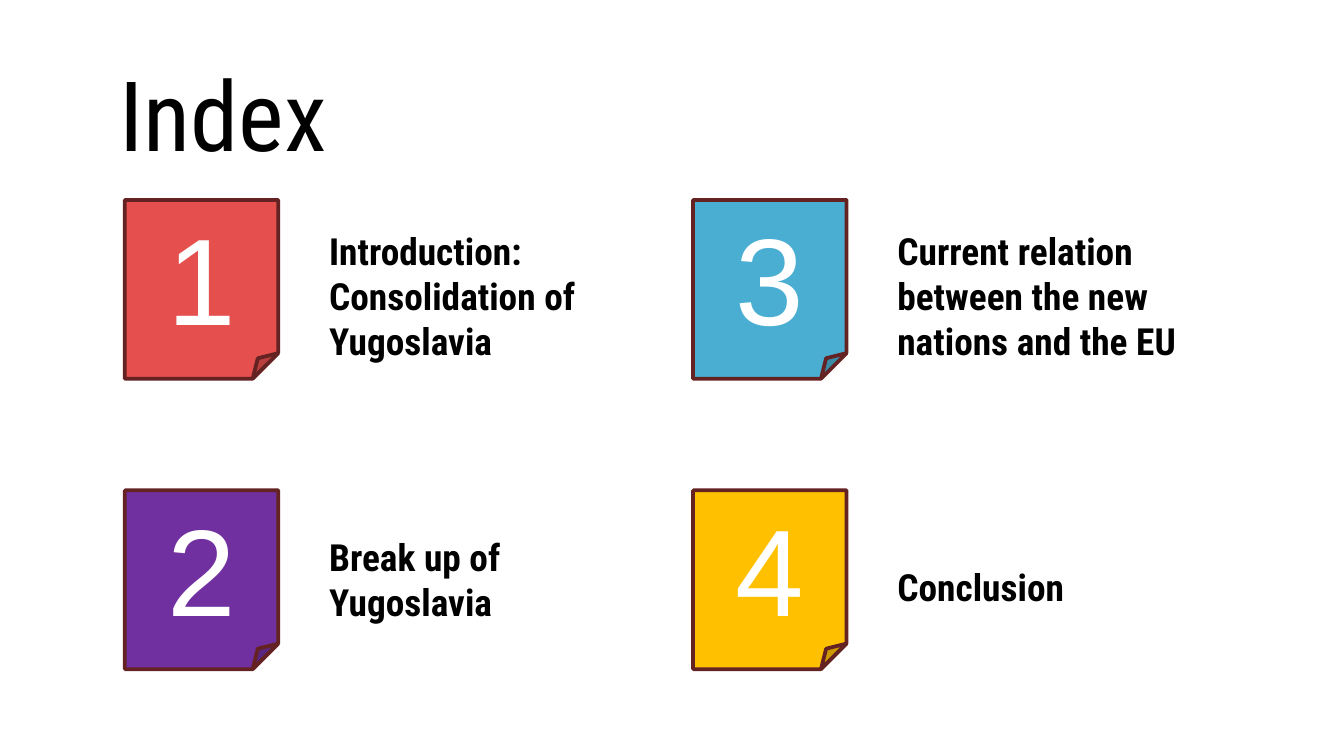
"""Build the Index slide: a title and four numbered notes with their topics."""
from dataclasses import dataclass

from pptx import Presentation
from pptx import util as u
from pptx.dml.color import RGBColor
from pptx.enum import shapes, text
from pptx.slide import Slide
from pptx.text.text import TextFrame

COLORS = {
    "red": "E54F4E",
    "purple": "7030A0",
    "blue": "49AED1",
    "amber": "FFC000",
    "border": "642322",
    "ink": "000000",
    "white": "FFFFFF",
}
HEADING_FONT = "Roboto Condensed"
NUMBER_FONT = "Arial"
LEFT, TOP = 2.36, 3.78
COLUMN_STEP, ROW_STEP = 10.74, 5.49
NOTE_WIDTH, NOTE_HEIGHT = 2.9, 3.38
LABEL_OFFSET, LABEL_WIDTH = 3.61, 5.84


@dataclass
class Topic:
    """One numbered entry of the index, with its label's top and height in cm."""

    label: str
    color: str
    label_top: float
    label_height: float


TOPICS = [
    Topic("Introduction: Consolidation of Yugoslavia", "red", 4.19, 2.82),
    Topic("Break up of Yugoslavia", "purple", 9.98, 1.96),
    Topic("Current relation between the new nations and the EU", "blue", 4.19, 2.82),
    Topic("Conclusion", "amber", 10.54, 1.12),
]


def rgb(name: str) -> RGBColor:
    """Return the named colour."""
    return RGBColor.from_string(COLORS[name])


def write(tf: TextFrame, content: str, font: str, size: float, color: str,
          bold: bool = False) -> None:
    """Set the text of a frame and format its run."""
    tf.word_wrap = True
    p = tf.paragraphs[0]
    p.text = content
    r = p.runs[0]
    r.font.name = font
    r.font.size = u.Pt(size)
    r.font.bold = bold
    r.font.color.rgb = rgb(color)


def add_title(s: Slide, content: str) -> None:
    """Add the slide title."""
    sp = s.shapes.add_textbox(u.Cm(2.01), u.Cm(0), u.Cm(12.55), u.Cm(4.27))
    tf = sp.text_frame
    tf.vertical_anchor = text.MSO_ANCHOR.MIDDLE
    tf.margin_left = tf.margin_right = u.Cm(0.25)
    tf.margin_top = tf.margin_bottom = u.Cm(0.25)
    write(tf, content, HEADING_FONT, 52, "ink")


def add_note(s: Slide, number: int, color: str, left: float, top: float) -> None:
    """Add a numbered note with a folded corner."""
    sp = s.shapes.add_shape(shapes.MSO_SHAPE.FOLDED_CORNER, u.Cm(left), u.Cm(top),
                            u.Cm(NOTE_WIDTH), u.Cm(NOTE_HEIGHT))
    sp.shadow.inherit = False
    sp.fill.solid()
    sp.fill.fore_color.rgb = rgb(color)
    sp.line.color.rgb = rgb("border")
    sp.line.width = u.Pt(2)
    tf = sp.text_frame
    tf.vertical_anchor = text.MSO_ANCHOR.MIDDLE
    write(tf, str(number), NUMBER_FONT, 66, "white")
    tf.paragraphs[0].alignment = text.PP_ALIGN.CENTER


def add_label(s: Slide, topic: Topic, left: float) -> None:
    """Add the wording of a topic."""
    sp = s.shapes.add_textbox(u.Cm(left), u.Cm(topic.label_top),
                              u.Cm(LABEL_WIDTH), u.Cm(topic.label_height))
    tf = sp.text_frame
    write(tf, topic.label, HEADING_FONT, 20, "ink", bold=True)
    tf.auto_size = text.MSO_AUTO_SIZE.SHAPE_TO_FIT_TEXT


def main() -> None:
    """Build and save the presentation."""
    prs = Presentation()
    prs.slide_width, prs.slide_height = u.Cm(25.4), u.Cm(14.29)
    s = prs.slides.add_slide(prs.slide_layouts[6])
    add_title(s, "Index")
    for i, topic in enumerate(TOPICS):
        column, row = divmod(i, 2)
        left = LEFT + column * COLUMN_STEP
        add_note(s, i + 1, topic.color, left, TOP + row * ROW_STEP)
        add_label(s, topic, left + LABEL_OFFSET)
    prs.save("out.pptx")


if __name__ == "__main__":
    main()
